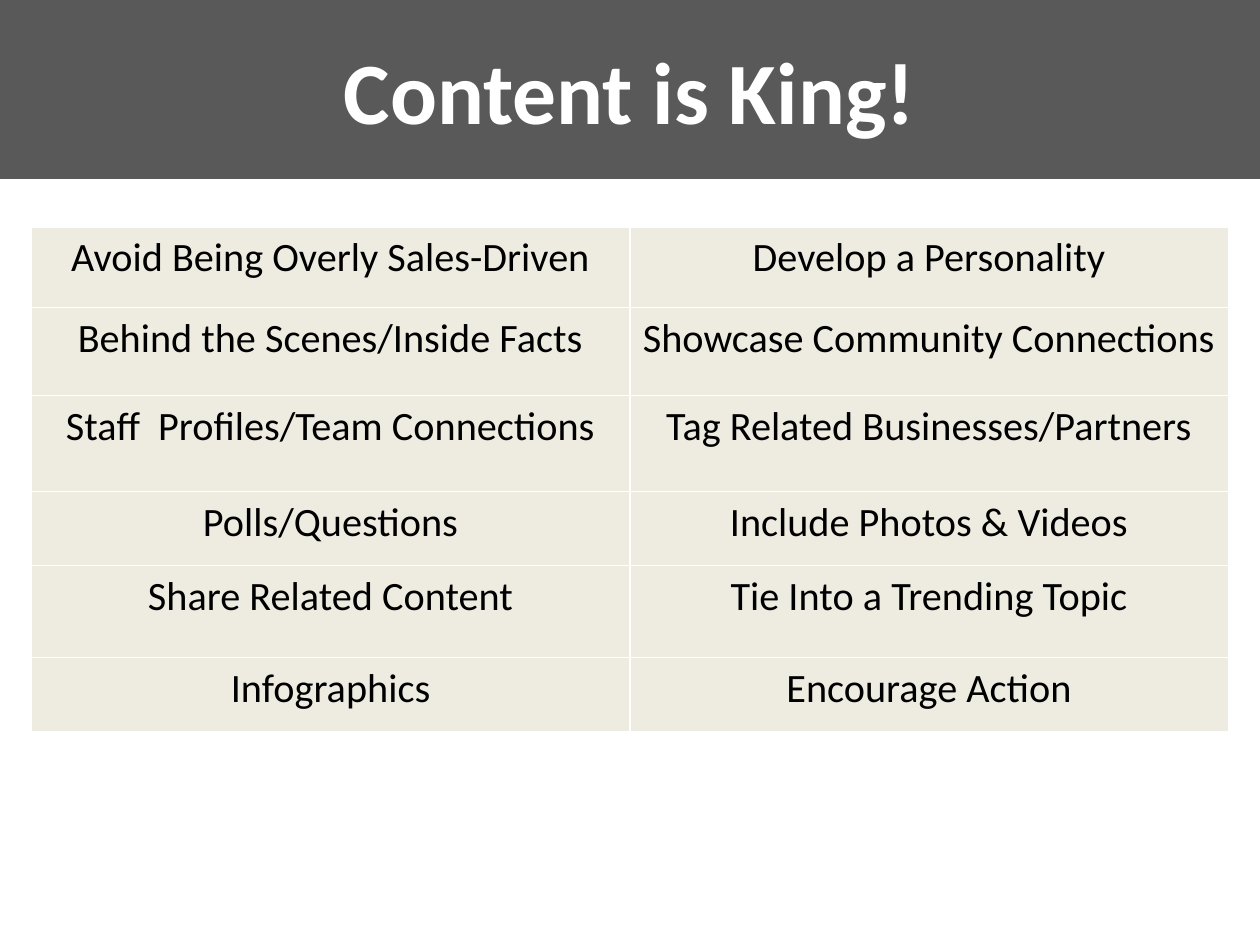
from lxml.etree import SubElement
from pptx import Presentation
from pptx.dml.color import RGBColor
from pptx.enum.shapes import MSO_SHAPE
from pptx.enum.text import MSO_ANCHOR, PP_ALIGN
from pptx.oxml.ns import qn
from pptx.util import Inches, Pt

WHITE, BLACK, GRAY, CREAM = "FFFFFF", "000000", "595959", "EEECE1"
COLUMN_WIDTH = 4.75
ROW_HEIGHTS = [0.64, 0.7, 0.76, 0.59, 0.73, 0.59]
TIPS = [
    ("Avoid Being Overly Sales-Driven", "Develop a Personality"),
    ("Behind the Scenes/Inside Facts", "Showcase Community Connections"),
    ("Staff  Profiles/Team Connections", "Tag Related Businesses/Partners"),
    ("Polls/Questions", "Include Photos & Videos"),
    ("Share Related Content", "Tie Into a Trending Topic"),
    ("Infographics", "Encourage Action"),
]


def color(hex_string):
    return RGBColor.from_string(hex_string)


class SlideBuilder:
    font_name = "Calibri"

    def __init__(self, slide):
        self.slide = slide

    def set_text(self, text_frame, text, size, text_color, bold=False):
        paragraph = text_frame.paragraphs[0]
        paragraph.text = text
        paragraph.alignment = PP_ALIGN.CENTER
        font = paragraph.font
        font.name, font.size, font.bold = self.font_name, Pt(size), bold
        font.color.rgb = color(text_color)

    def banner(self, text, width, height):
        shape = self.slide.shapes.add_shape(
            MSO_SHAPE.RECTANGLE, 0, 0, Inches(width), Inches(height))
        shape.shadow.inherit = False
        shape.fill.solid()
        shape.fill.fore_color.rgb = color(GRAY)
        shape.line.fill.background()
        shape.text_frame.word_wrap = True
        shape.text_frame.vertical_anchor = MSO_ANCHOR.MIDDLE
        self.set_text(shape.text_frame, text, 50, WHITE, bold=True)

    def borders(self, cell, line_color, points):
        properties = cell._tc.get_or_add_tcPr()
        for side in ("L", "R", "T", "B"):
            line = SubElement(properties, qn(f"a:ln{side}"), w=str(Pt(points)))
            fill = SubElement(line, qn("a:solidFill"))
            SubElement(fill, qn("a:srgbClr"), val=line_color)

    def table(self, rows, left, top, column_width, row_heights):
        column_count = len(rows[0])
        table = self.slide.shapes.add_table(
            len(rows), column_count, Inches(left), Inches(top),
            Inches(column_width * column_count), Inches(sum(row_heights))).table
        table.first_row = table.horz_banding = False
        for column in table.columns:
            column.width = Inches(column_width)
        for row, height, texts in zip(table.rows, row_heights, rows):
            row.height = Inches(height)
            for cell, text in zip(row.cells, texts):
                self.borders(cell, WHITE, 1)
                cell.fill.solid()
                cell.fill.fore_color.rgb = color(CREAM)
                self.set_text(cell.text_frame, text, 23, BLACK)


def main():
    presentation = Presentation()
    presentation.slide_width = Inches(10)
    presentation.slide_height = Inches(7.5)
    slide = presentation.slides.add_slide(presentation.slide_layouts[6])
    builder = SlideBuilder(slide)
    builder.banner("Content is King!", 10, 1.42)
    builder.table(TIPS, 0.25, 1.8, COLUMN_WIDTH, ROW_HEIGHTS)
    presentation.save("out.pptx")


if __name__ == "__main__":
    main()
